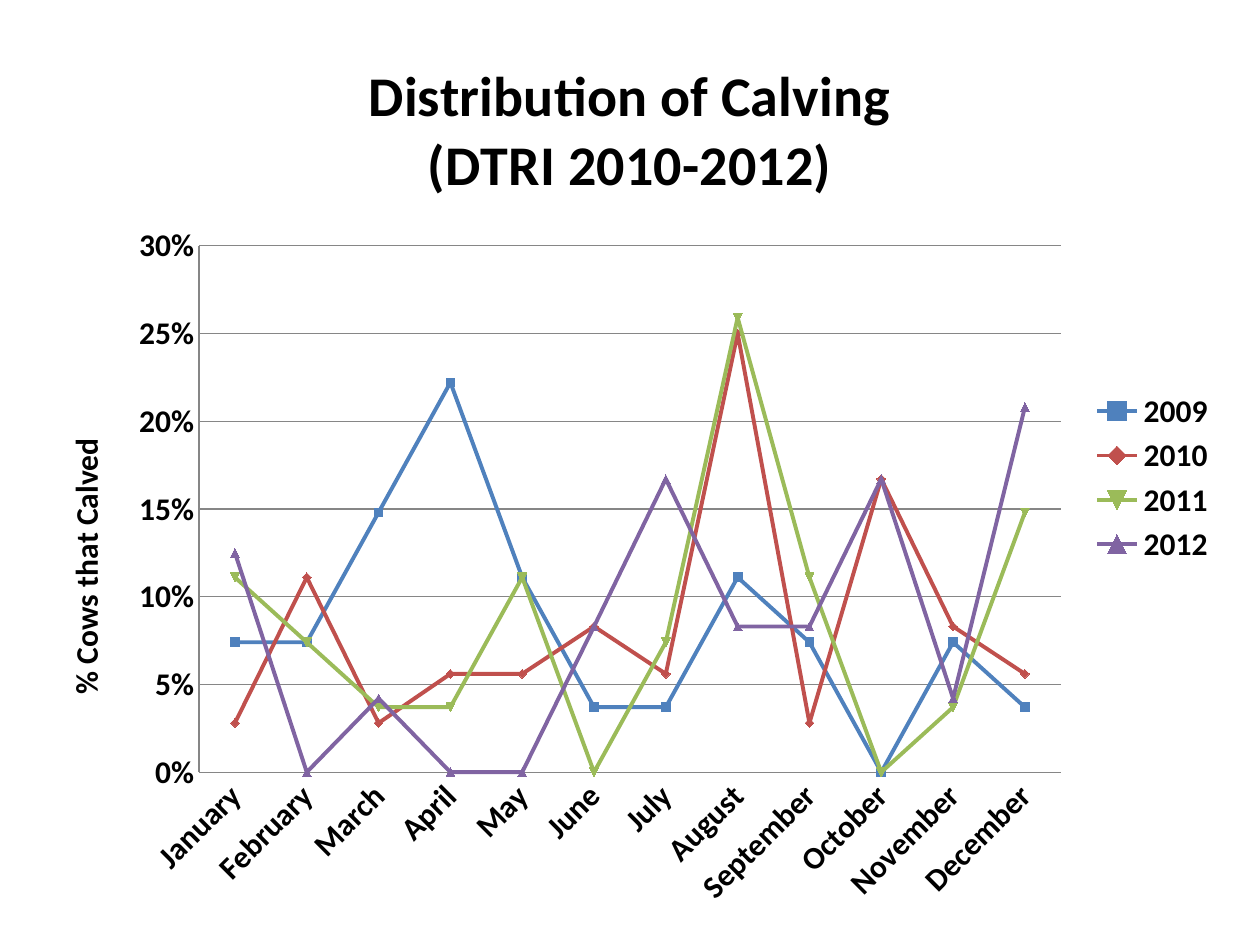
"""Build a slide with a line chart of calving by month."""
import pptx
import pptx.chart.data
import pptx.dml.color
import pptx.enum.chart
import pptx.oxml
import pptx.oxml.ns
import pptx.util

Pt = pptx.util.Pt
RGB = pptx.dml.color.RGBColor
BLACK = RGB(0x00, 0x00, 0x00)
GRAY = RGB(0x86, 0x86, 0x86)
BLUE = RGB(0x4F, 0x81, 0xBD)
RED = RGB(0xC0, 0x50, 0x4D)
GREEN = RGB(0x9B, 0xBB, 0x59)
PURPLE = RGB(0x80, 0x64, 0xA2)

MONTHS = ["January", "February", "March", "April", "May", "June", "July",
          "August", "September", "October", "November", "December"]
YEARS = [
    ("2009", BLUE, [0.074, 0.074, 0.148, 0.222, 0.111, 0.037,
                    0.037, 0.111, 0.074, 0, 0.074, 0.037]),
    ("2010", RED, [0.028, 0.111, 0.028, 0.056, 0.056, 0.083,
                   0.056, 0.25, 0.028, 0.167, 0.083, 0.056]),
    ("2011", GREEN, [0.111, 0.074, 0.037, 0.037, 0.111, 0,
                     0.074, 0.259, 0.111, 0, 0.037, 0.148]),
    ("2012", PURPLE, [0.125, 0, 0.042, 0, 0, 0.083,
                      0.167, 0.083, 0.083, 0.167, 0.042, 0.208]),
]


def set_font(font, size):
    """Give a font the bold black look of the chart."""
    font.name = "Calibri"
    font.size = Pt(size)
    font.bold = True
    font.color.rgb = BLACK


def set_line(line, color, width):
    """Color a line and set its width."""
    line.color.rgb = color
    line.width = Pt(width)


def add_title(owner, lines, size):
    """Write the title of a chart or an axis, one paragraph a line."""
    frame = owner.text_frame
    for n, text in enumerate(lines):
        para = frame.add_paragraph() if n else frame.paragraphs[0]
        run = para.add_run()
        run.text = text
        set_font(run.font, size)


def add_chart(slide):
    """Add the line chart with its data and legend."""
    data = pptx.chart.data.CategoryChartData(number_format="0%")
    data.categories = MONTHS
    for name, _, vals in YEARS:
        data.add_series(name, vals)
    kind = pptx.enum.chart.XL_CHART_TYPE.LINE_MARKERS
    chart = slide.shapes.add_chart(
        kind, Pt(18), Pt(18), Pt(684), Pt(510), data).chart
    set_font(chart.font, 18)
    chart.has_legend = True
    chart.legend.position = pptx.enum.chart.XL_LEGEND_POSITION.RIGHT
    chart.legend.include_in_layout = False
    return chart


def style_rows(chart):
    """Color the line and markers of each year."""
    chart.plots[0].vary_by_categories = False
    for row, (_, color, _) in zip(chart.plots[0].series, YEARS):
        row.smooth = False
        set_line(row.format.line, color, 2.25)
        row.marker.size = 5
        row.marker.format.fill.solid()
        row.marker.format.fill.fore_color.rgb = color
        set_line(row.marker.format.line, color, 0.75)


def style_axes(chart):
    """Set scale, ticks, grid and labels of both axes."""
    months, share = chart.category_axis, chart.value_axis
    for axis in (months, share):
        axis.major_tick_mark = pptx.enum.chart.XL_TICK_MARK.NONE
        axis.minor_tick_mark = pptx.enum.chart.XL_TICK_MARK.NONE
        set_line(axis.format.line, GRAY, 0.75)
        set_font(axis.tick_labels.font, 18)
    body = months._element.find(".//" + pptx.oxml.ns.qn("a:bodyPr"))
    body.set("rot", "-2700000")
    share.minimum_scale = 0
    share.maximum_scale = 0.3
    share.major_unit = 0.05
    share.tick_labels.number_format = "0%"
    share.tick_labels.number_format_is_linked = False
    share.has_major_gridlines = True
    set_line(share.major_gridlines.format.line, GRAY, 0.75)
    add_title(share.axis_title, ["% Cows that Calved"], 18)


def place_plot(chart, left, top, width, height):
    """Fix the inner plot area as shares of the chart."""
    area = chart._chartSpace.find(".//" + pptx.oxml.ns.qn("c:plotArea"))
    for old in area.findall(pptx.oxml.ns.qn("c:layout")):
        area.remove(old)
    area.insert(0, pptx.oxml.parse_xml(
        f'<c:layout {pptx.oxml.ns.nsdecls("c")}><c:manualLayout>'
        '<c:layoutTarget val="inner"/>'
        '<c:xMode val="edge"/><c:yMode val="edge"/>'
        f'<c:x val="{left}"/><c:y val="{top}"/>'
        f'<c:w val="{width}"/><c:h val="{height}"/>'
        '</c:manualLayout></c:layout>'))


def main():
    """Build and save the slide."""
    deck = pptx.Presentation()
    deck.slide_width, deck.slide_height = Pt(720), Pt(540)
    slide = deck.slides.add_slide(deck.slide_layouts[6])
    chart = add_chart(slide)
    chart.has_title = True
    add_title(chart.chart_title,
              ["Distribution of Calving", "(DTRI 2010-2012)"], 32)
    chart.chart_title.include_in_layout = False
    style_rows(chart)
    style_axes(chart)
    place_plot(chart, 0.14, 0.24, 0.72, 0.59)
    deck.save("out.pptx")


if __name__ == "__main__":
    main()
